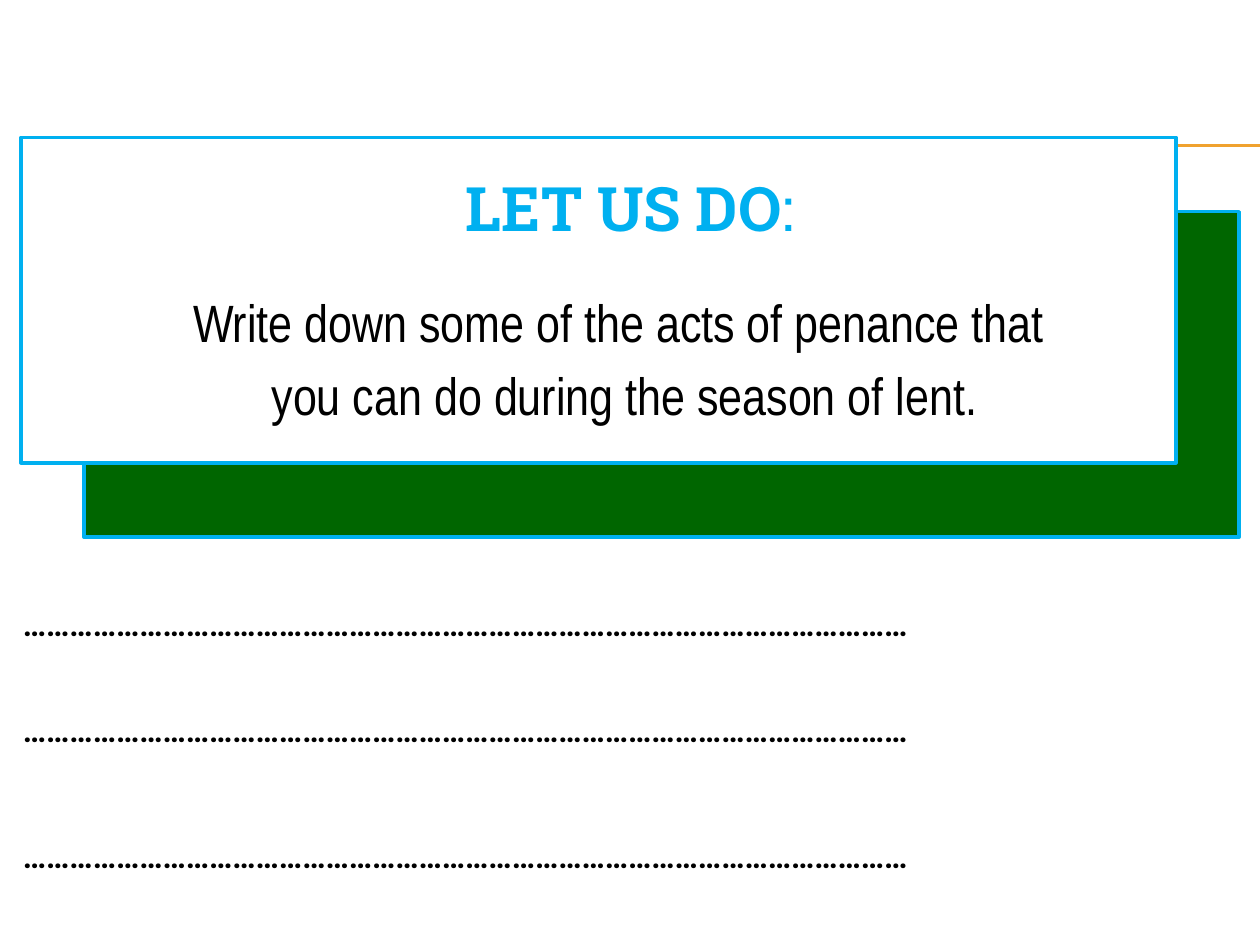
from lxml import etree
from pptx import Presentation
from pptx.dml.color import RGBColor
from pptx.enum.shapes import MSO_CONNECTOR, MSO_SHAPE
from pptx.enum.text import MSO_ANCHOR, PP_ALIGN
from pptx.oxml.ns import qn
from pptx.util import Pt

STRAIGHT = MSO_CONNECTOR.STRAIGHT
RECTANGLE = MSO_SHAPE.RECTANGLE
MIDDLE = MSO_ANCHOR.MIDDLE
CENTER = PP_ALIGN.CENTER
JUSTIFY = PP_ALIGN.JUSTIFY
COLORS = {
    "rule": "F0A22E",
    "accent": "00B0F0",
    "shade": "006600",
    "card": "FFFFFF",
    "text": "000000",
}


class SlideBuilder:
    def __init__(self, slide):
        self.slide = slide

    def color(self, name):
        return RGBColor.from_string(COLORS[name])

    def format(self, paragraph, font, size, color, alignment, bold=False):
        paragraph.alignment = alignment
        paragraph.font.name = font
        paragraph.font.size = Pt(size)
        paragraph.font.bold = bold
        paragraph.font.color.rgb = self.color(color)

    def rule(self, left, right, top):
        connector = self.slide.shapes.add_connector(
            STRAIGHT, Pt(left), Pt(top), Pt(right), Pt(top))
        connector.line.color.rgb = self.color("rule")
        connector.line.width = Pt(0.75)
        etree.SubElement(connector._element.spPr, qn("a:effectLst"))

    def card(self, left, top, width, height, fill):
        shape = self.slide.shapes.add_shape(
            RECTANGLE, Pt(left), Pt(top), Pt(width), Pt(height))
        shape.shadow.inherit = False
        shape.fill.solid()
        shape.fill.fore_color.rgb = self.color(fill)
        shape.line.color.rgb = self.color("accent")
        shape.line.width = Pt(2)

    def title(self, left, top, width, height, heading, ending):
        shape = self.slide.shapes.title
        shape._element.getparent().append(shape._element)
        shape.left, shape.top = Pt(left), Pt(top)
        shape.width, shape.height = Pt(width), Pt(height)
        shape.text_frame.vertical_anchor = MIDDLE
        paragraph = shape.text_frame.paragraphs[0]
        self.format(paragraph, "Roboto Slab", 35, "accent", CENTER)
        for text, bold in ((heading, True), (ending, False)):
            run = paragraph.add_run()
            run.text = text
            run.font.bold = bold

    def text(self, left, top, width, height, lines, font, size, alignment,
             bold=False, space_before=0):
        box = self.slide.shapes.add_textbox(
            Pt(left), Pt(top), Pt(width), Pt(height))
        frame = box.text_frame
        frame.word_wrap = True
        frame.text = "\n".join(lines)
        for paragraph in frame.paragraphs:
            self.format(paragraph, font, size, "text", alignment, bold)
            paragraph.space_before = Pt(space_before)


def main():
    presentation = Presentation()
    presentation.slide_width, presentation.slide_height = Pt(720), Pt(540)
    slide = presentation.slides.add_slide(presentation.slide_layouts[5])
    builder = SlideBuilder(slide)

    for top in (82.8, 83.5):
        builder.rule(40.3, 720, top)
    for left, top, fill in ((48, 121, "shade"), (12, 78.5, "card")):
        builder.card(left, top, 660, 186, fill)

    builder.title(0, 85.5, 720, 66, "LET US DO", ":")
    builder.text(
        54, 162, 606, 72,
        ["Write down some of the acts of penance that ",
         "you can do during the season of lent."],
        "Arial Narrow", 30, CENTER, space_before=6)
    for top in (342, 403, 475):
        builder.text(6, top, 702, 29, ["…" * 38], "Roboto", 18, JUSTIFY, bold=True)

    presentation.save("out.pptx")


if __name__ == "__main__":
    main()
